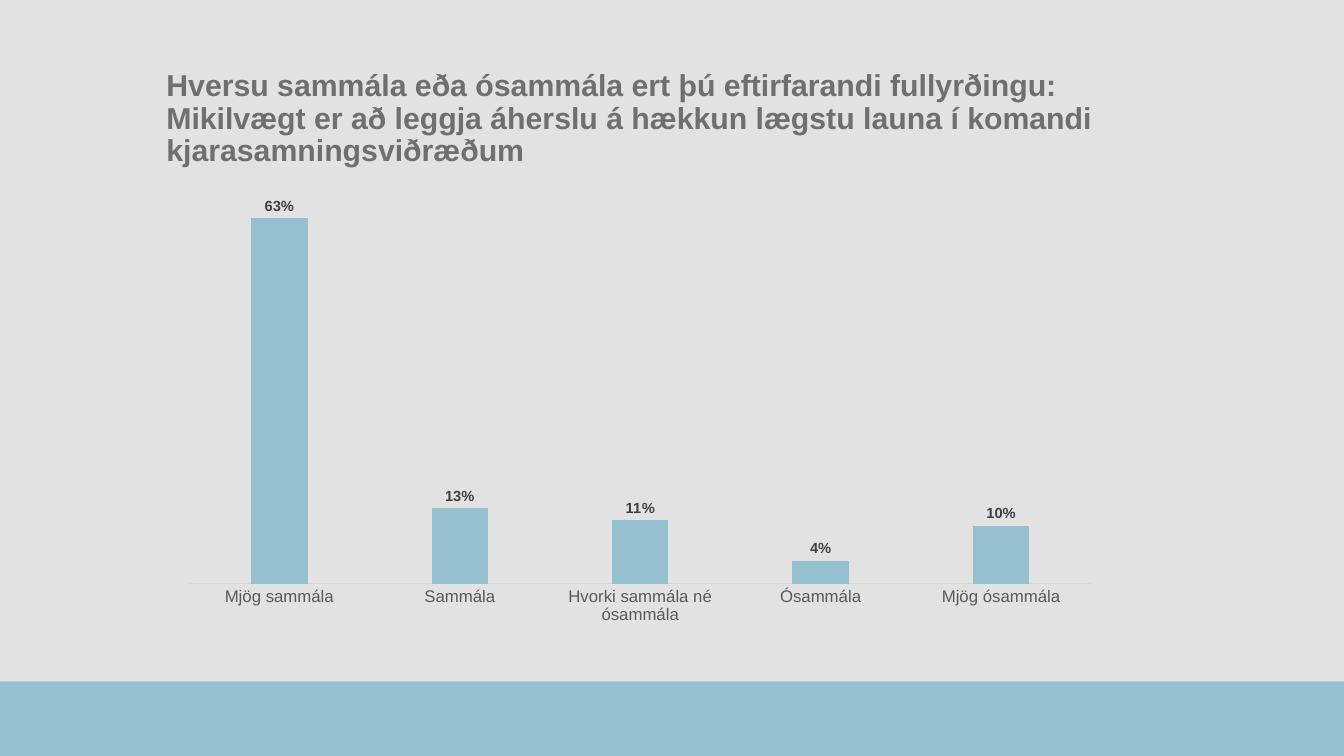
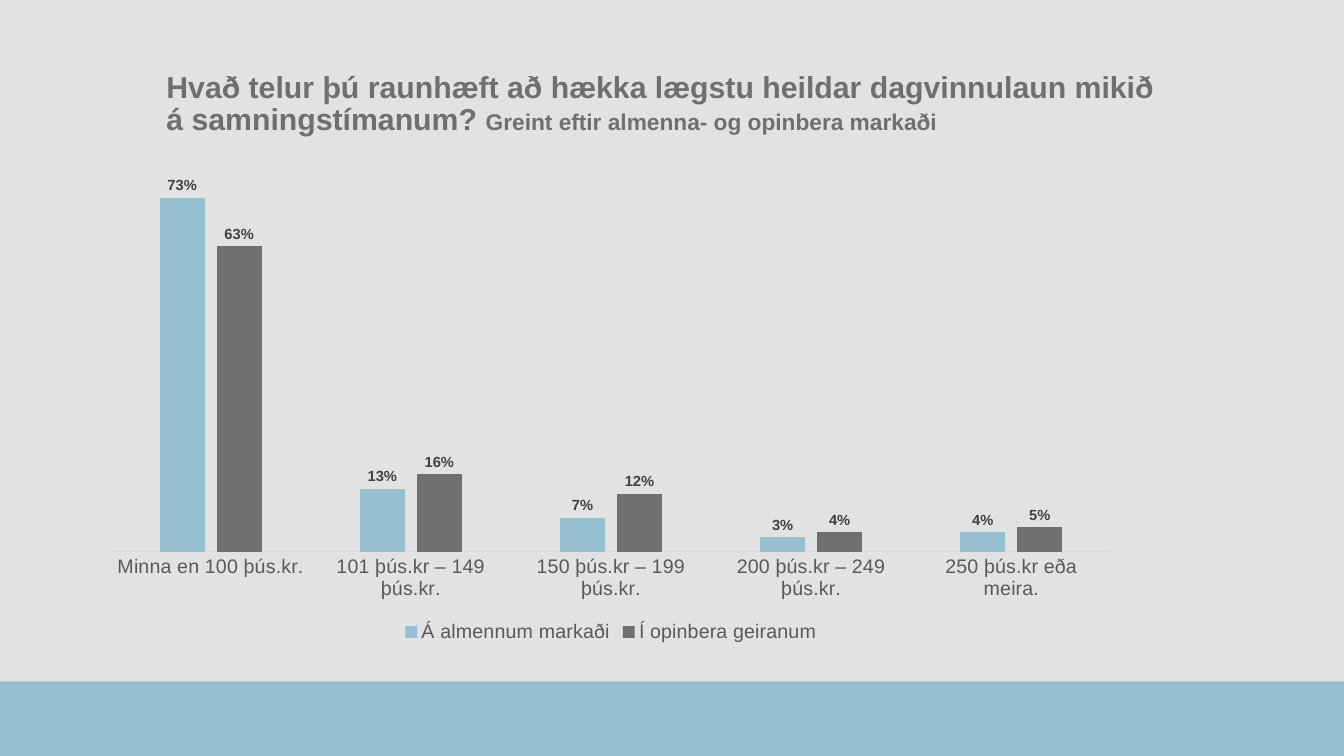
from pptx import Presentation
from pptx.chart.data import CategoryChartData
from pptx.dml.color import RGBColor
from pptx.enum.chart import XL_CHART_TYPE, XL_LABEL_POSITION, XL_LEGEND_POSITION, XL_TICK_MARK
from pptx.enum.shapes import MSO_SHAPE
from pptx.enum.text import MSO_ANCHOR, MSO_AUTO_SIZE, PP_ALIGN
from pptx.util import Inches, Pt

COLORS = {
    "background": "E2E2E2",
    "blue": "96C0CF",
    "gray": "706F6F",
    "axis_text": "595959",
    "label_text": "404040",
    "axis_line": "D9D9D9",
    "black": "000000",
}
SERIES_COLORS = ("blue", "gray")
SLIDE_WIDTH, SLIDE_HEIGHT = 13.33, 7.5
BAND_BOX = (0, 6.76, SLIDE_WIDTH, 0.74)

SLIDES = [
    {
        "title_box": (1.55, 0.7, 10.24, 0.97),
        "title_runs": [
            ("Hversu sammála eða ósammála ert þú eftirfarandi fullyrðingu: "
             "Mikilvægt er að leggja áherslu á hækkun lægstu launa í komandi "
             "kjarasamningsviðræðum", 21.6),
        ],
        "chart_box": (1.69, 1.67, 9.32, 4.61),
        "categories": ["Mjög sammála", "Sammála", "Hvorki sammála né ósammála",
                       "Ósammála", "Mjög ósammála"],
        "series": {"Series 1": (0.63, 0.13, 0.11, 0.04, 0.1)},
        "axis_size": 12,
        "axis_maximum": 0.7,
    },
    {
        "title_box": (1.55, 0.7, 10.24, 0.68),
        "title_runs": [
            ("Hvað telur þú raunhæft að hækka lægstu heildar dagvinnulaun "
             "mikið á samningstímanum? ", 21.6),
            ("Greint eftir almenna- og opinbera markaði", 16.2),
        ],
        "chart_box": (0.89, 1.53, 10.34, 4.89),
        "categories": ["Minna en 100 þús.kr.", "101 þús.kr – 149 þús.kr.",
                       "150 þús.kr – 199 þús.kr.", "200 þús.kr – 249 þús.kr.",
                       "250 þús.kr eða meira."],
        "series": {
            "Á almennum markaði": (0.73, 0.13, 0.07, 0.03, 0.04),
            "Í opinbera geiranum": (0.63, 0.16, 0.12, 0.04, 0.05),
        },
        "axis_size": 14,
        "axis_maximum": 0.8,
    },
]


def color(name):
    """Return the named palette colour."""
    return RGBColor.from_string(COLORS[name])


def set_attributes(target, values):
    """Set each attribute of the target from a dict."""
    for name, value in values.items():
        setattr(target, name, value)


def format_font(font, size, color_name, bold=False):
    """Apply the shared typeface with a size, colour and weight."""
    set_attributes(font, {"name": "Arial", "size": Pt(size), "bold": bold})
    font.color.rgb = color(color_name)


def fill_solid(fill, color_name):
    """Fill with a palette colour."""
    fill.solid()
    fill.fore_color.rgb = color(color_name)


def add_band(slide, box):
    """Draw the coloured band at the foot of the slide."""
    band = slide.shapes.add_shape(MSO_SHAPE.RECTANGLE, *map(Inches, box))
    band.shadow.inherit = False
    fill_solid(band.fill, "blue")
    band.line.fill.background()


def add_title(slide, box, runs):
    """Place the title placeholder and write its runs."""
    title = slide.shapes.title
    set_attributes(title, dict(zip(("left", "top", "width", "height"), map(Inches, box))))
    frame = title.text_frame
    set_attributes(frame, {
        "word_wrap": True,
        "auto_size": MSO_AUTO_SIZE.NONE,
        "vertical_anchor": MSO_ANCHOR.MIDDLE,
    })
    paragraph = frame.paragraphs[0]
    set_attributes(paragraph, {"alignment": PP_ALIGN.LEFT, "line_spacing": 0.9})
    for text, size in runs:
        run = paragraph.add_run()
        run.text = text
        format_font(run.font, size, "gray", bold=True)


def format_axes(chart, size, maximum):
    """Style the category axis and hide the value axis."""
    category_axis = chart.category_axis
    set_attributes(category_axis, {
        "major_tick_mark": XL_TICK_MARK.NONE,
        "minor_tick_mark": XL_TICK_MARK.NONE,
        "has_major_gridlines": False,
    })
    format_font(category_axis.tick_labels.font, size, "axis_text")
    category_axis.format.line.color.rgb = color("axis_line")
    category_axis.format.line.width = Pt(0.75)
    set_attributes(chart.value_axis, {
        "visible": False,
        "has_major_gridlines": False,
        "minimum_scale": 0,
        "maximum_scale": maximum,
    })
    set_attributes(chart.value_axis.tick_labels,
                   {"number_format": "0.0%", "number_format_is_linked": False})


def format_series(series, color_name):
    """Colour one series and label its columns."""
    fill_solid(series.format.fill, color_name)
    series.invert_if_negative = False
    labels = series.data_labels
    set_attributes(labels, {
        "show_value": True,
        "number_format": "0%",
        "number_format_is_linked": False,
        "position": XL_LABEL_POSITION.OUTSIDE_END,
    })
    format_font(labels.font, 10.5, "label_text", bold=True)


def add_column_chart(slide, box, categories, series, axis_size, axis_maximum):
    """Add a clustered column chart, with a legend for several series."""
    data = CategoryChartData(number_format="0%")
    data.categories = categories
    for name, values in series.items():
        data.add_series(name, values)
    chart = slide.shapes.add_chart(
        XL_CHART_TYPE.COLUMN_CLUSTERED, *map(Inches, box), data).chart
    format_font(chart.font, 10, "black")
    set_attributes(chart, {"has_title": False, "has_legend": len(series) > 1})
    if chart.has_legend:
        set_attributes(chart.legend, {
            "position": XL_LEGEND_POSITION.BOTTOM, "include_in_layout": False})
        format_font(chart.legend.font, axis_size, "axis_text")
    format_axes(chart, axis_size, axis_maximum)
    plot = chart.plots[0]
    set_attributes(plot, {"gap_width": 219, "overlap": -27, "vary_by_categories": False})
    for plot_series, color_name in zip(plot.series, SERIES_COLORS):
        format_series(plot_series, color_name)


def add_survey_slide(presentation, content):
    """Build one survey question slide."""
    slide = presentation.slides.add_slide(presentation.slide_layouts[5])
    add_band(slide, BAND_BOX)
    add_title(slide, content["title_box"], content["title_runs"])
    add_column_chart(slide, content["chart_box"], content["categories"],
                     content["series"], content["axis_size"], content["axis_maximum"])


def main():
    """Build and save the presentation."""
    presentation = Presentation()
    presentation.slide_width = Inches(SLIDE_WIDTH)
    presentation.slide_height = Inches(SLIDE_HEIGHT)
    fill_solid(presentation.slide_master.background.fill, "background")
    for content in SLIDES:
        add_survey_slide(presentation, content)
    presentation.save("out.pptx")


if __name__ == "__main__":
    main()
